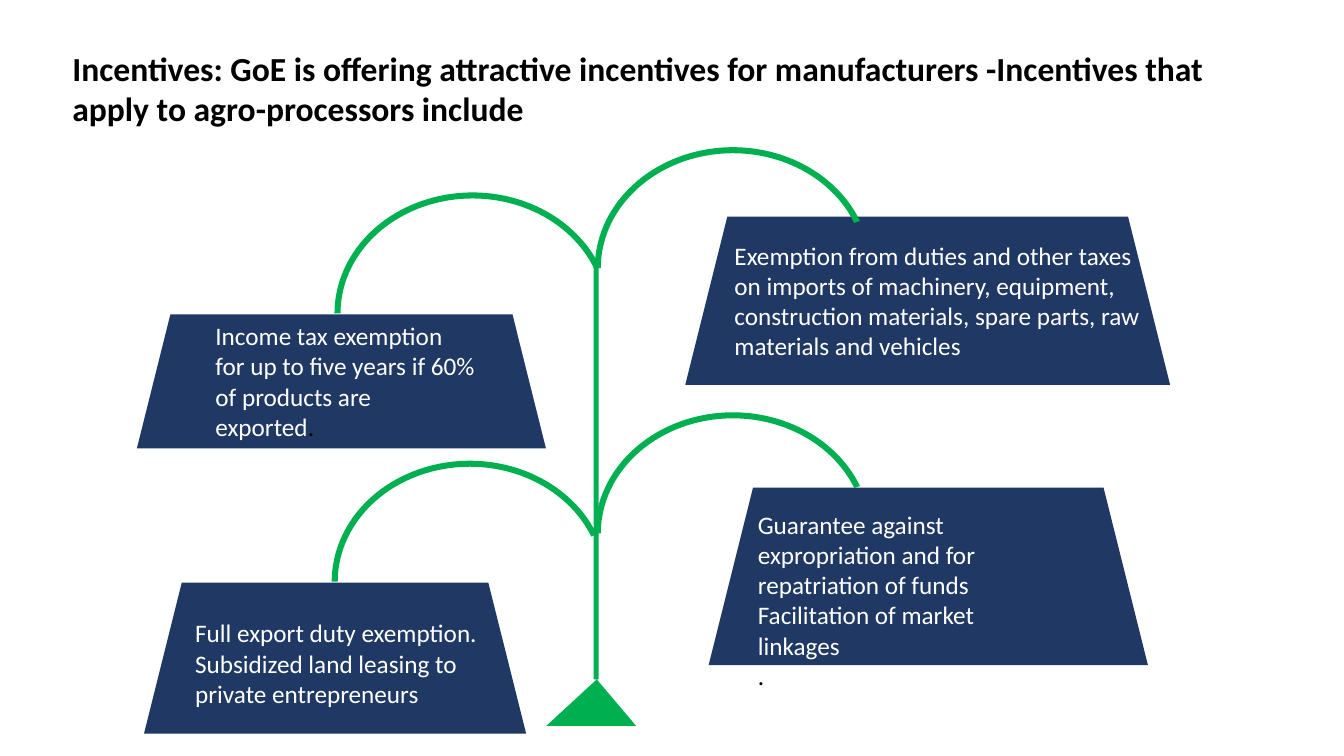
from dataclasses import dataclass

from pptx import Presentation
from pptx.dml.color import RGBColor
from pptx.enum.shapes import MSO_SHAPE
from pptx.enum.text import MSO_ANCHOR, MSO_AUTO_SIZE, PP_ALIGN
from pptx.util import Cm, Pt

TRAPEZOID, BLOCK_ARC = MSO_SHAPE.TRAPEZOID, MSO_SHAPE.BLOCK_ARC
TOP, LEFT, NO_FIT = MSO_ANCHOR.TOP, PP_ALIGN.LEFT, MSO_AUTO_SIZE.NONE
TITLE_ONLY = 5


@dataclass(frozen=True)
class Theme:
    font: str = "Calibri"
    title_size: Pt = Pt(24)
    body_size: Pt = Pt(18)
    branch: RGBColor = RGBColor(0x00, 0xB0, 0x50)
    panel: RGBColor = RGBColor(0x20, 0x38, 0x64)
    light: RGBColor = RGBColor(0xFF, 0xFF, 0xFF)
    dark: RGBColor = RGBColor(0x00, 0x00, 0x00)


THEME = Theme()

TITLE = ("Incentives: GoE is offering attractive incentives for manufacturers "
         "-Incentives that apply to agro-processors include")

# Panel box, text box, paragraphs as (light words, dark full stop); boxes in cm
INCENTIVES = [
    ((17.86, 12.29, 11.07, 4.47), (18.85, 12.7, 7.72, 4.88),
     [("Guarantee against expropriation and for repatriation of funds", ""),
      ("Facilitation of market linkages", ""),
      ("", ".")]),
    ((17.27, 5.46, 12.22, 4.24), (18.26, 5.92, 11.13, 3.33),
     [("Exemption from duties and other taxes on imports of machinery, "
       "equipment, construction materials, spare parts, raw materials and "
       "vehicles", "")]),
    ((3.45, 7.92, 10.31, 3.38), (5.18, 7.95, 7.04, 3.33),
     [("Income tax exemption for up to five years if 60% of products are "
       "exported", ".")]),
    ((3.63, 14.68, 9.63, 3.81), (4.67, 15.44, 7.67, 2.57),
     [("Full export duty exemption.", ""),
      ("Subsidized land leasing to private entrepreneurs", "")]),
]

BRANCH_SIZE = (6.96, 6.1)
BRANCH_CORNERS = [(14.99, 10.39), (8.36, 11.61), (8.43, 4.85), (14.99, 3.71)]
BRANCH_SWEEP = (108, 203.74, 0.025)  # start angle, end angle, thickness

STEM = [(14.96, 6.71), (15.09, 6.71), (15.09, 17.12), (14.96, 17.12)]
FOOT = [(15.04, 17.12), (16.03, 18.29), (13.77, 18.29)]


def in_cm(lengths):
    return [Cm(length) for length in lengths]


def paint(shape, color):
    shape.fill.solid()
    shape.fill.fore_color.rgb = color
    shape.line.fill.background()
    shape.shadow.inherit = False


def style_run(run, size, color, bold=False):
    run.font.name = THEME.font
    run.font.size = size
    run.font.color.rgb = color
    run.font.bold = bold


def set_title(slide):
    title = slide.shapes.title
    title.left, title.top, title.width, title.height = in_cm((1.57, 1.07, 30.2, 2.31))
    frame = title.text_frame
    frame.text = TITLE
    frame.word_wrap = True
    frame.auto_size = NO_FIT
    frame.vertical_anchor = TOP
    heading = frame.paragraphs[0]
    heading.alignment = LEFT
    style_run(heading.runs[0], THEME.title_size, THEME.dark, bold=True)


def add_trunk(slide):
    """Draw the stem and its triangular foot as one outline."""
    stem, foot = [[in_cm(point) for point in part] for part in (STEM, FOOT)]
    outline = slide.shapes.build_freeform(*stem[0], scale=1.0)
    outline.add_line_segments(stem[1:])
    outline.move_to(*foot[0])
    outline.add_line_segments(foot[1:])
    paint(outline.convert_to_shape(), THEME.branch)


def add_panel(slide, box):
    paint(slide.shapes.add_shape(TRAPEZOID, *in_cm(box)), THEME.panel)


def add_branch(slide, corner):
    branch = slide.shapes.add_shape(BLOCK_ARC, *in_cm(corner + BRANCH_SIZE))
    for index, value in enumerate(BRANCH_SWEEP):
        branch.adjustments[index] = value
    paint(branch, THEME.branch)


def add_incentive_text(slide, box, paragraphs):
    frame = slide.shapes.add_textbox(*in_cm(box)).text_frame
    frame.word_wrap = True
    for index, wording in enumerate(paragraphs):
        paragraph = frame.add_paragraph() if index else frame.paragraphs[0]
        for words, color in zip(wording, (THEME.light, THEME.dark)):
            if words:
                run = paragraph.add_run()
                run.text = words
                style_run(run, THEME.body_size, color)


def main():
    deck = Presentation()
    deck.slide_width, deck.slide_height = in_cm((33.87, 19.05))
    slide = deck.slides.add_slide(deck.slide_layouts[TITLE_ONLY])
    set_title(slide)
    add_trunk(slide)
    for panel_box, _, _ in INCENTIVES:
        add_panel(slide, panel_box)
    for corner in BRANCH_CORNERS:
        add_branch(slide, corner)
    for _, text_box, paragraphs in INCENTIVES:
        add_incentive_text(slide, text_box, paragraphs)
    deck.save("out.pptx")


if __name__ == "__main__":
    main()
